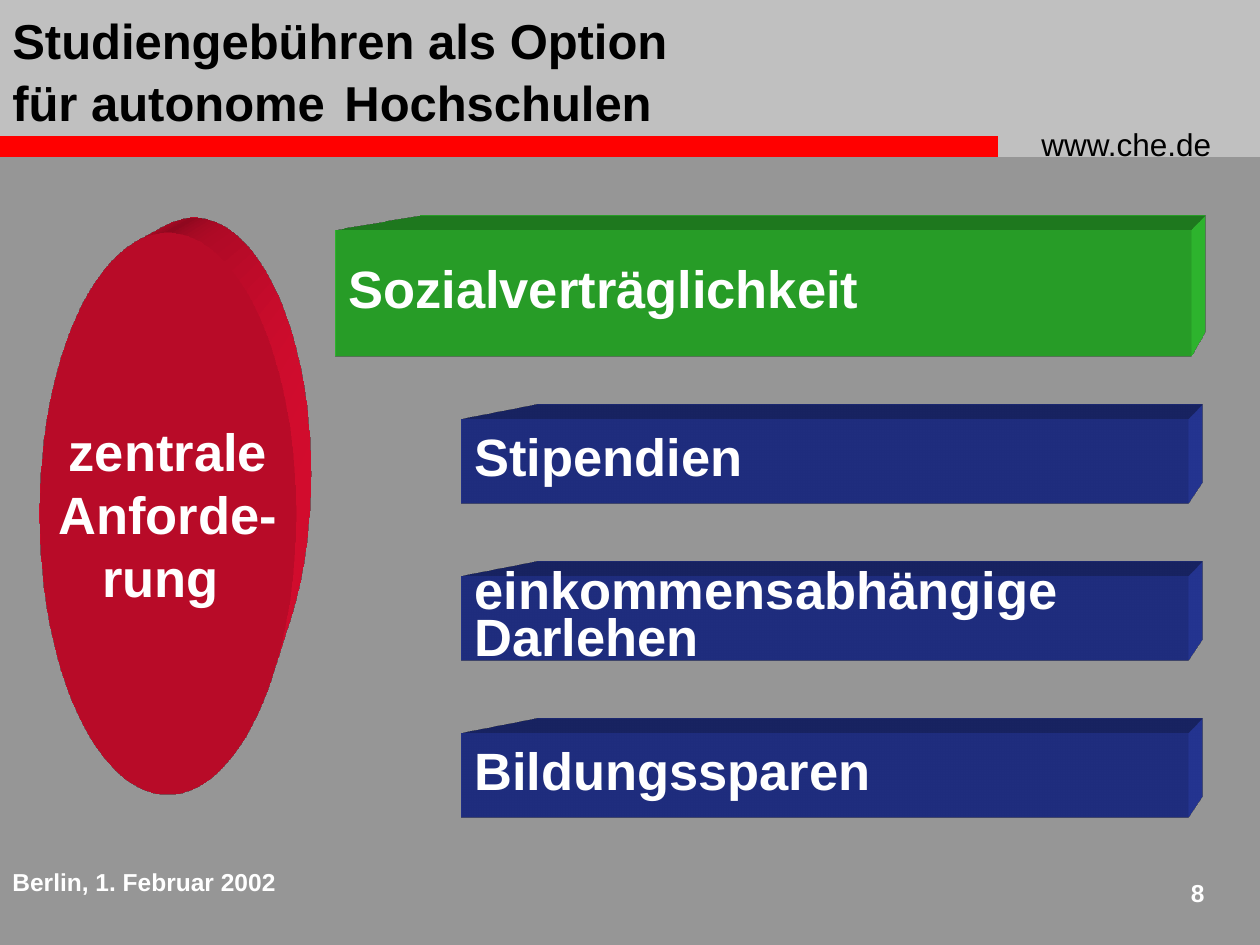
from lxml import etree
from pptx import Presentation
from pptx.dml.color import RGBColor
from pptx.enum.shapes import MSO_SHAPE
from pptx.enum.text import MSO_ANCHOR, PP_ALIGN
from pptx.util import Emu, Pt

RECT, OVAL = MSO_SHAPE.RECTANGLE, MSO_SHAPE.OVAL
LEFT, CENTER, RIGHT = PP_ALIGN.LEFT, PP_ALIGN.CENTER, PP_ALIGN.RIGHT
MIDDLE = MSO_ANCHOR.MIDDLE
PX = 914400 / 126
WHITE, BLACK = "FFFFFF", "000000"
DRAWING = "http://schemas.openxmlformats.org/drawingml/2006/main"
EXTRUSION = """<root xmlns:a="{ns}">
<a:scene3d><a:camera prst="legacyPerspectiveTopRight"/>
<a:lightRig rig="legacyFlat3" dir="b"/></a:scene3d>
<a:sp3d extrusionH="887400" prstMaterial="legacyMatte">
<a:bevelT w="13500" h="13500" prst="angle"/>
<a:bevelB w="13500" h="13500" prst="angle"/>
<a:extrusionClr><a:srgbClr val="{color}"/></a:extrusionClr>
</a:sp3d></root>"""

prs = Presentation()
prs.slide_width, prs.slide_height = Emu(round(1260 * PX)), Emu(round(945 * PX))
slide = prs.slides.add_slide(prs.slide_layouts[6])
slide.background.fill.solid()
slide.background.fill.fore_color.rgb = RGBColor.from_string("969696")


def add_block(kind, box, color):
    """Add a filled shape, or a text box when kind is None."""
    place = [Emu(round(v * PX)) for v in box]
    if kind is None:
        return slide.shapes.add_textbox(*place)
    block = slide.shapes.add_shape(kind, *place)
    block.fill.solid()
    block.fill.fore_color.rgb = RGBColor.from_string(color)
    block.line.fill.background()
    block.shadow.inherit = False
    return block


def write(block, lines, size, color=WHITE, bold=True, align=LEFT, spacing=None, wrap=True):
    """Write each line as a paragraph; a line is a list of (text, size) runs or a string."""
    frame = block.text_frame
    frame.word_wrap = wrap
    for i, line in enumerate(lines):
        paragraph = frame.paragraphs[0] if i == 0 else frame.add_paragraph()
        paragraph.alignment = align
        if spacing:
            paragraph.line_spacing = spacing
        for text, run_size in [(line, size)] if isinstance(line, str) else line:
            run = paragraph.add_run()
            run.text = text
            style = {"name": "Arial", "size": Pt(run_size), "bold": bold}
            for key, value in style.items():
                setattr(run.font, key, value)
            run.font.color.rgb = RGBColor.from_string(color)


# Header band with red rule
add_block(RECT, (0, 0, 1260, 157), "C0C0C0")
add_block(RECT, (-1, 136, 999, 21), "FF0000")
website = add_block(None, (1029, 119, 221, 50), None)
write(website, ["www.che.de"], 18, BLACK, bold=False)

# Footer
date = add_block(None, (0, 861, 305, 63), None)
write(date, ["Berlin, 1. Februar 2002"], 14)
page_number = add_block(None, (1144, 872, 73, 53), None)
write(page_number, ["8"], 14, align=RIGHT)

# Extruded ellipse and bars
blocks = [
    (OVAL, (40, 233, 256, 562), "F00E34", ["zentrale", "Anforde-", "rung "], CENTER, None),
    (RECT, (336, 231, 854, 126), "33CC33", ["Sozialverträglichkeit"], LEFT, 0.75),
]
measures = [["Stipendien"], ["einkommensabhängige", "Darlehen"], ["Bildungssparen"]]
for i, measure in enumerate(measures):
    blocks.append((RECT, (462, 420 + i * 157, 725, 84), "293BA5", measure, LEFT, 0.75))

for kind, box, color, lines, align, spacing in blocks:
    block = add_block(kind, box, color)
    block.text_frame.vertical_anchor = MIDDLE
    write(block, lines, 30, align=align, spacing=spacing, wrap=False)
    for part in list(etree.fromstring(EXTRUSION.format(ns=DRAWING, color=color))):
        block.element.spPr.append(part)

# Title
title = add_block(None, (0, 4, 998, 131), None)
second_line = [("für autonome", 28), (" ", 40), ("Hochschulen", 28)]
write(title, ["Studiengebühren als Option", second_line], 28, BLACK)
title.text_frame.paragraphs[1].line_spacing = Pt(38)

prs.save("out.pptx")
